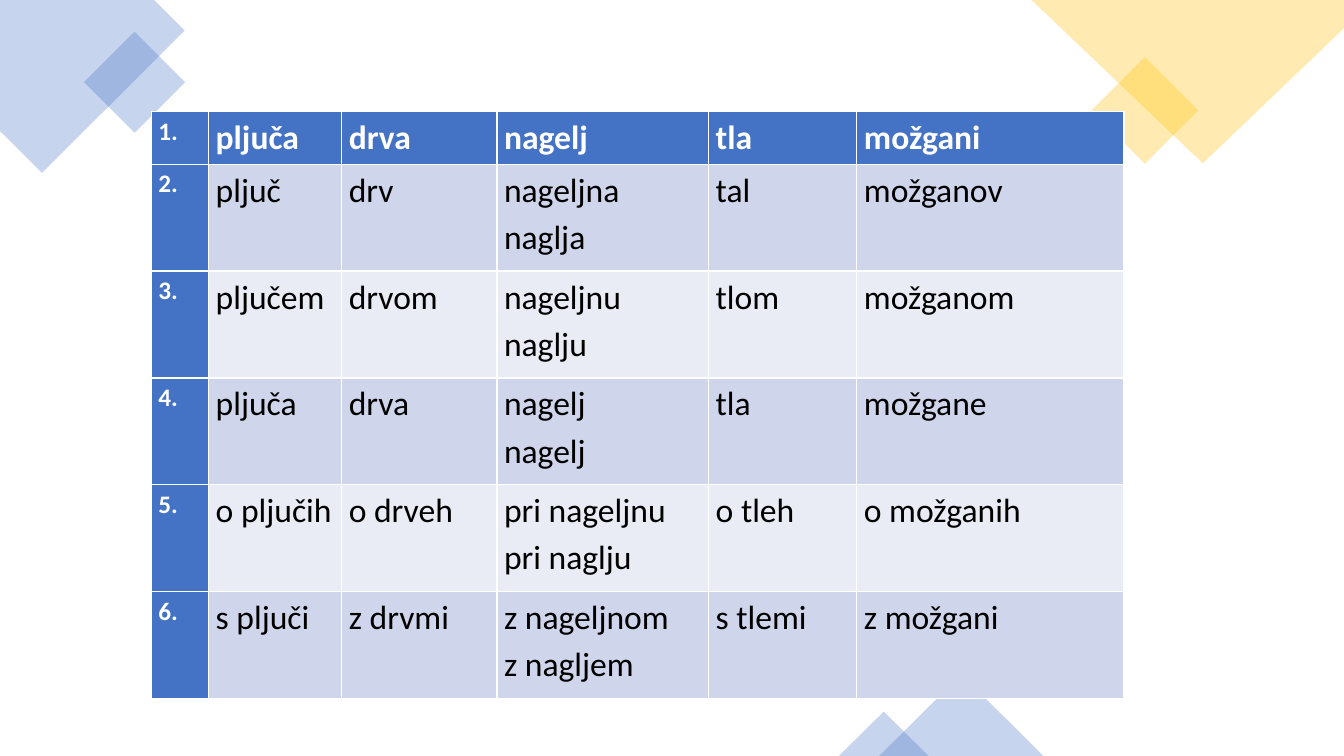
import pptx
import pptx.util
import pptx.dml.color
import pptx.enum.shapes
import pptx.oxml
import pptx.oxml.ns
from pptx.util import Inches

BLUE, GOLD, WHITE, BLACK = "4472C4", "FFC000", "FFFFFF", "000000"
BANDS = ("E9EBF5", "CFD5EA")
COLUMN_WIDTHS = (0.57, 1.32, 1.54, 2.1, 1.47, 2.65)
HEADER_HEIGHT, CASE_HEIGHT = 0.52, 1.06

# Nouns by grammatical case; the list holds both accepted forms
DECLENSIONS = [
    ("pljuča", "drva", ["nagelj"], "tla", "možgani"),
    ("pljuč", "drv", ["nageljna", "naglja"], "tal", "možganov"),
    ("pljučem", "drvom", ["nageljnu", "naglju"], "tlom", "možganom"),
    ("pljuča", "drva", ["nagelj", "nagelj"], "tla", "možgane"),
    ("o pljučih", "o drveh", ["pri nageljnu", "pri naglju"], "o tleh", "o možganih"),
    ("s pljuči", "z drvmi", ["z nageljnom", "z nagljem"], "s tlemi", "z možgani"),
]


def set_fill(fill, color, alpha=None):
    fill.solid()
    fill.fore_color.rgb = pptx.dml.color.RGBColor.from_string(color)
    if alpha is not None:
        srgb = fill._xPr.find(".//" + pptx.oxml.ns.qn("a:srgbClr"))
        opacity = pptx.oxml.parse_xml(
            f'<a:alpha {pptx.oxml.ns.nsdecls("a")} val="{alpha * 1000}"/>')
        srgb.append(opacity)


def finish_decoration(shape, color, rotation):
    set_fill(shape.fill, color, alpha=30)
    shape.line.fill.background()
    shape.shadow.inherit = False
    shape.rotation = rotation


def add_preset(slide, kind, left, top, width, height, color, rotation=0):
    shape = slide.shapes.add_shape(
        kind, Inches(left), Inches(top), Inches(width), Inches(height))
    finish_decoration(shape, color, rotation)


def add_polygon(slide, left, top, points, color, rotation):
    corners = [(Inches(left + x), Inches(top + y)) for x, y in points]
    builder = slide.shapes.build_freeform(*corners[0], scale=1.0)
    builder.add_line_segments(corners[1:], close=True)
    finish_decoration(builder.convert_to_shape(), color, rotation)


def write_text(frame, lines, size=24, color=BLACK, bold=False):
    for index, line in enumerate(lines):
        paragraph = frame.add_paragraph() if index else frame.paragraphs[0]
        paragraph.line_spacing = 1.15
        run = paragraph.add_run()
        run.text = line
        run.font.name = "Calibri"
        run.font.size = pptx.util.Pt(size)
        run.font.bold = bold
        run.font.color.rgb = pptx.dml.color.RGBColor.from_string(color)


def add_declension_table(slide, left, top):
    row_heights = [HEADER_HEIGHT] + [CASE_HEIGHT] * (len(DECLENSIONS) - 1)
    table = slide.shapes.add_table(
        len(row_heights), len(COLUMN_WIDTHS), Inches(left), Inches(top),
        Inches(sum(COLUMN_WIDTHS)), Inches(sum(row_heights))).table
    table.first_col = True
    for column, width in zip(table.columns, COLUMN_WIDTHS):
        column.width = Inches(width)
    for row, height in zip(table.rows, row_heights):
        row.height = Inches(height)

    for r, nouns in enumerate(DECLENSIONS):
        for c, content in enumerate((f"{r + 1}.", *nouns)):
            cell = table.cell(r, c)
            cell.margin_left = cell.margin_right = Inches(0.07)
            cell.margin_top = cell.margin_bottom = 0
            heading = r == 0 or c == 0
            set_fill(cell.fill, BLUE if heading else BANDS[r % 2])
            lines = content if isinstance(content, list) else [content]
            write_text(cell.text_frame, lines, size=24 if c else 18,
                       color=WHITE if heading else BLACK, bold=heading)


def main():
    presentation = pptx.Presentation()
    presentation.slide_width = Inches(13.33)
    presentation.slide_height = Inches(7.5)
    slide = presentation.slides.add_slide(presentation.slide_layouts[6])
    square = pptx.enum.shapes.MSO_SHAPE.RECTANGLE
    triangle = pptx.enum.shapes.MSO_SHAPE.ISOSCELES_TRIANGLE

    # Corner diamonds
    add_polygon(slide, -0.41, -0.28,
                [(2, 1.08), (0.92, 0), (0, 0.92), (0, 1.51), (2, 1.51)], BLUE, 315)
    add_preset(slide, square, 0.98, 0.46, 0.71, 0.71, BLUE, 315)
    add_preset(slide, square, 10.98, 0.72, 0.75, 0.75, GOLD, 315)
    add_polygon(slide, 10.23, 0,
                [(0, 1.62), (3.1, 1.62), (1.4, 0), (0, 1.34)], GOLD, 180)

    # Bottom peaks
    add_preset(slide, triangle, 8.72, 6.69, 1.63, 0.81, BLUE)
    add_preset(slide, triangle, 8.32, 7.06, 0.89, 0.44, BLUE)

    # Declension table
    add_declension_table(slide, 1.5, 1.11)

    presentation.save("out.pptx")


if __name__ == "__main__":
    main()
